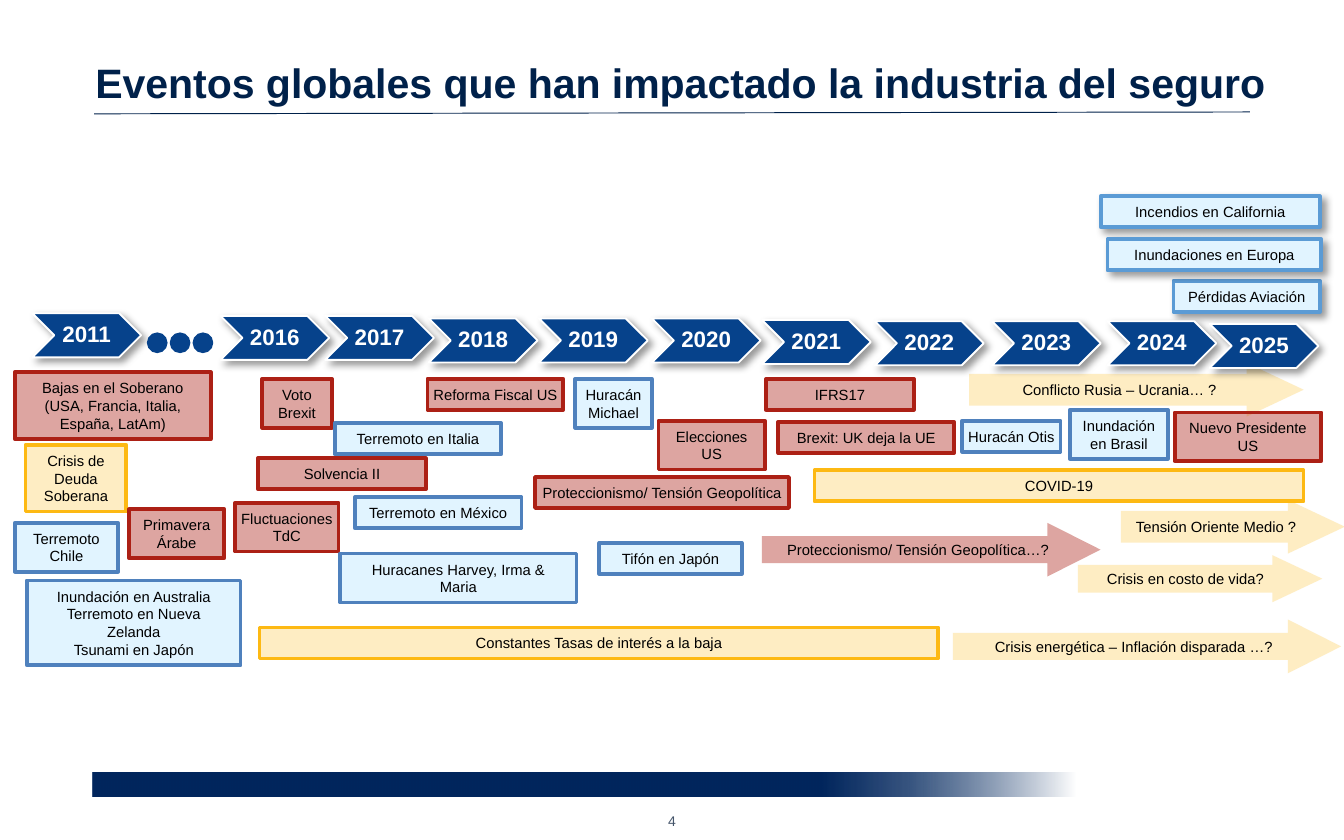
"""Build a timeline slide of global events that affected the insurance industry."""
from dataclasses import dataclass

from lxml import etree
from pptx import Presentation
from pptx.dml.color import RGBColor
from pptx.enum.shapes import MSO_CONNECTOR, MSO_SHAPE
from pptx.enum.text import MSO_ANCHOR, PP_ALIGN
from pptx.oxml.ns import qn
from pptx.util import Pt


@dataclass(frozen=True)
class Theme:
    font: str = "Arial"
    navy: str = "00214A"
    bar: str = "00265D"
    blue: str = "06428B"
    white: str = "FFFFFF"
    black: str = "000000"
    grey: str = "44546A"
    red: str = "AC2015"
    gold: str = "FDB913"
    pale: str = "E1F4FF"
    sea: str = "4F81BD"
    sky: str = "5B9BD5"
    title: float = 22
    year: float = 12
    label: float = 7.9
    page: float = 7.5


T = Theme()
STYLES = {
    "red": (T.red, 40, T.red, False),
    "gold": (T.gold, 25, T.gold, False),
    "sea": (T.pale, 100, T.sea, False),
    "sky": (T.pale, 100, T.sky, True),
}


def write(sp, text, size=T.label, color=T.black, bold=False, align=PP_ALIGN.CENTER,
          anchor=MSO_ANCHOR.MIDDLE, side=7.2, edge=3.6, spacing=1.0, wrap=True):
    tf = sp.text_frame
    tf.word_wrap = wrap
    tf.vertical_anchor = anchor
    tf.margin_left = tf.margin_right = Pt(side)
    tf.margin_top = tf.margin_bottom = Pt(edge)
    for i, line in enumerate(text.split("\n")):
        p = tf.add_paragraph() if i else tf.paragraphs[0]
        p.alignment = align
        p.line_spacing = spacing
        r = p.add_run()
        r.text = line
        r.font.name = T.font
        r.font.size = Pt(size)
        r.font.bold = bold
        r.font.color.rgb = RGBColor.from_string(color)


def add_block(kind, x, y, w, h, fill, alpha=100, line=None, width=2, shadow=False):
    sp = s.shapes.add_shape(kind, Pt(x), Pt(y), Pt(w), Pt(h))
    sp.shadow.inherit = False
    sp.fill.solid()
    sp.fill.fore_color.rgb = RGBColor.from_string(fill)
    if alpha < 100:
        clr = sp._element.spPr.find(qn("a:solidFill"))[0]
        etree.SubElement(clr, qn("a:alpha"), val=str(alpha * 1000))
    if line:
        sp.line.color.rgb = RGBColor.from_string(line)
        sp.line.width = Pt(width)
    else:
        sp.line.fill.background()
    if shadow:
        shd = etree.SubElement(sp._element.spPr.find(qn("a:effectLst")), qn("a:outerShdw"),
                               blurRad=str(Pt(4)), dist=str(Pt(3)), dir="2700000")
        clr = etree.SubElement(shd, qn("a:srgbClr"), val=T.black)
        etree.SubElement(clr, qn("a:alpha"), val="40000")
    return sp


prs = Presentation()
prs.slide_width, prs.slide_height = Pt(720), Pt(450)
s = prs.slides.add_slide(prs.slide_layouts[6])

bar = add_block(MSO_SHAPE.RECTANGLE, 49.5, 414, 526.5, 12.6, T.bar)
bar.fill.gradient()
bar.fill.gradient_angle = 0
stops = bar._element.spPr.find(qn("a:gradFill")).find(qn("a:gsLst"))
for stop in list(stops):
    stops.remove(stop)
for pos, color, alpha in [(0, T.bar, 100), (74, T.bar, 100), (83, T.bar, 78), (100, T.white, 100)]:
    stop = etree.SubElement(stops, qn("a:gs"), pos=str(pos * 1000))
    clr = etree.SubElement(stop, qn("a:srgbClr"), val=color)
    etree.SubElement(clr, qn("a:alpha"), val=str(alpha * 1000))

rule = s.shapes.add_connector(MSO_CONNECTOR.STRAIGHT, Pt(50.4), Pt(61), Pt(669.6), Pt(60))
rule.line.color.rgb = RGBColor.from_string(T.navy)
rule.line.width = Pt(0.5)
etree.SubElement(rule._element.spPr, qn("a:effectLst"))

title = s.shapes.add_textbox(Pt(44), Pt(14.4), Pt(662.4), Pt(46.8))
write(title, "Eventos globales que han impactado la industria del seguro", size=T.title,
      color=T.navy, bold=True, align=PP_ALIGN.LEFT, anchor=MSO_ANCHOR.BOTTOM, spacing=0.9)

arrows = [
    ("gold", 510.5, 331.9, 208, 28.8, 0.5, 0.99, "Crisis energética – Inflación disparada …?"),
    ("gold", 519.1, 194.4, 179.3, 28.8, 0.59, 1.06, "Conflicto Rusia – Ucrania… ?"),
    ("red", 408.2, 280.1, 181.4, 28.8, 0.5, 0.99, "Proteccionismo/ Tensión Geopolítica…?"),
    ("gold", 600.5, 267.8, 120, 28.8, 0.59, 1.06, "Tensión Oriente Medio ?"),
    ("gold", 577.4, 297.4, 131, 25.2, 0.59, 1.06, "Crisis en costo de vida?"),
]
for style, x, y, w, h, body, head, text in arrows:
    sp = add_block(MSO_SHAPE.RIGHT_ARROW, x, y, w, h, *STYLES[style][:2])
    sp.adjustments[0], sp.adjustments[1] = body, head
    write(sp, text)

events = [
    ("gold", 13.7, 238.3, 54, 3, 7.2, "Crisis de Deuda Soberana"),
    ("red", 410.4, 203, 79.2, 1, 2.2, "IFRS17"),
    ("red", 140.4, 203, 37.4, 2, 7.2, "Voto Brexit"),
    ("red", 126, 269.3, 55.4, 2, 2.2, "Fluctuaciones\nTdC"),
    ("red", 138.2, 245.5, 90, 1, 7.2, "Solvencia II"),
    ("red", 229, 203, 72.7, 1, 2.2, "Reforma Fiscal US"),
    ("red", 352.8, 225.4, 56.9, 2, 7.2, "Elecciones US"),
    ("gold", 139, 336.2, 363.6, 1, 7.2, "Constantes Tasas de interés a la baja"),
    ("gold", 436.3, 252, 262.1, 1, 7.2, "COVID-19"),
    ("red", 416.9, 226.1, 94.3, 1, 2.2, "Brexit: UK deja la UE"),
    ("sky", 589.7, 105.1, 117.4, 1, 7.2, "Incendios en California"),
    ("sky", 628.6, 150.5, 78.5, 1, 7.2, "Pérdidas Aviación"),
    ("red", 629.3, 221, 78.5, 2, 2.2, "Nuevo Presidente US"),
    ("sky", 593.3, 128.2, 114.5, 1, 7.2, "Inundaciones en Europa"),
    ("red", 7.9, 199.4, 105.1, 3, 7.2, "Bajas en el Soberano\n(USA, Francia, Italia, España, LatAm)"),
    ("sea", 7.9, 280.1, 55.4, 2, 7.2, "Terremoto Chile"),
    ("sea", 14.4, 311, 114.5, 4, 7.2,
     "Inundación en Australia\nTerremoto en Nueva Zelanda\nTsunami en Japón"),
    ("sea", 190.1, 266.4, 89.3, 1, 2.2, "Terremoto en México"),
    ("sea", 182.2, 296.6, 126.7, 2, 7.2, "Huracanes Harvey, Irma & Maria"),
    ("sea", 179.3, 226.8, 89.3, 1, 7.2, "Terremoto en Italia"),
    ("red", 286.6, 255.6, 136.1, 1, 0, "Proteccionismo/ Tensión Geopolítica"),
    ("sea", 308.2, 203, 41, 2, 2.2, "Huracán\nMichael"),
    ("sea", 321.1, 290.9, 76.3, 1, 2.2, "Tifón en Japón"),
    ("red", 69.1, 272.9, 51.1, 2, 7.2, "Primavera Árabe"),
    ("sea", 515.5, 225.4, 52.6, 1, 2.2, "Huracán Otis"),
    ("sea", 573.1, 219.6, 52.6, 2, 2.2, "Inundación en Brasil"),
]
for style, x, y, w, lines, side, text in events:
    fill, alpha, line, shadow = STYLES[style]
    sp = add_block(MSO_SHAPE.RECTANGLE, x, y, w, 7 + 9.6 * lines, fill, alpha, line, shadow=shadow)
    write(sp, text, side=side)

years = [
    (2011, 17.3, 167.8), (2016, 118.1, 169.2), (2017, 174.2, 169.2), (2018, 229.7, 170.6),
    (2019, 288.7, 170.6), (2020, 349.2, 170.6), (2021, 408.2, 171.4), (2022, 468.7, 172.1),
    (2023, 531.4, 172.1), (2024, 593.3, 172.1), (2025, 648, 173.5),
]
for year, x, y in years:
    sp = add_block(MSO_SHAPE.CHEVRON, x, y, 58.3, 23.6, T.blue, line=T.white, width=1, shadow=True)
    write(sp, str(year), size=T.year, color=T.white, bold=True, side=1.4, edge=1.4,
          spacing=0.9, wrap=False)

for i in range(3):
    add_block(MSO_SHAPE.OVAL, 79.2 + 12.24 * i, 178.6, 10.1, 10.1, T.blue, line=T.blue, width=1)

page = s.shapes.add_textbox(Pt(308.2), Pt(429.1), Pt(103.7), Pt(20.9))
write(page, "4", size=T.page, color=T.grey)

prs.save("out.pptx")
